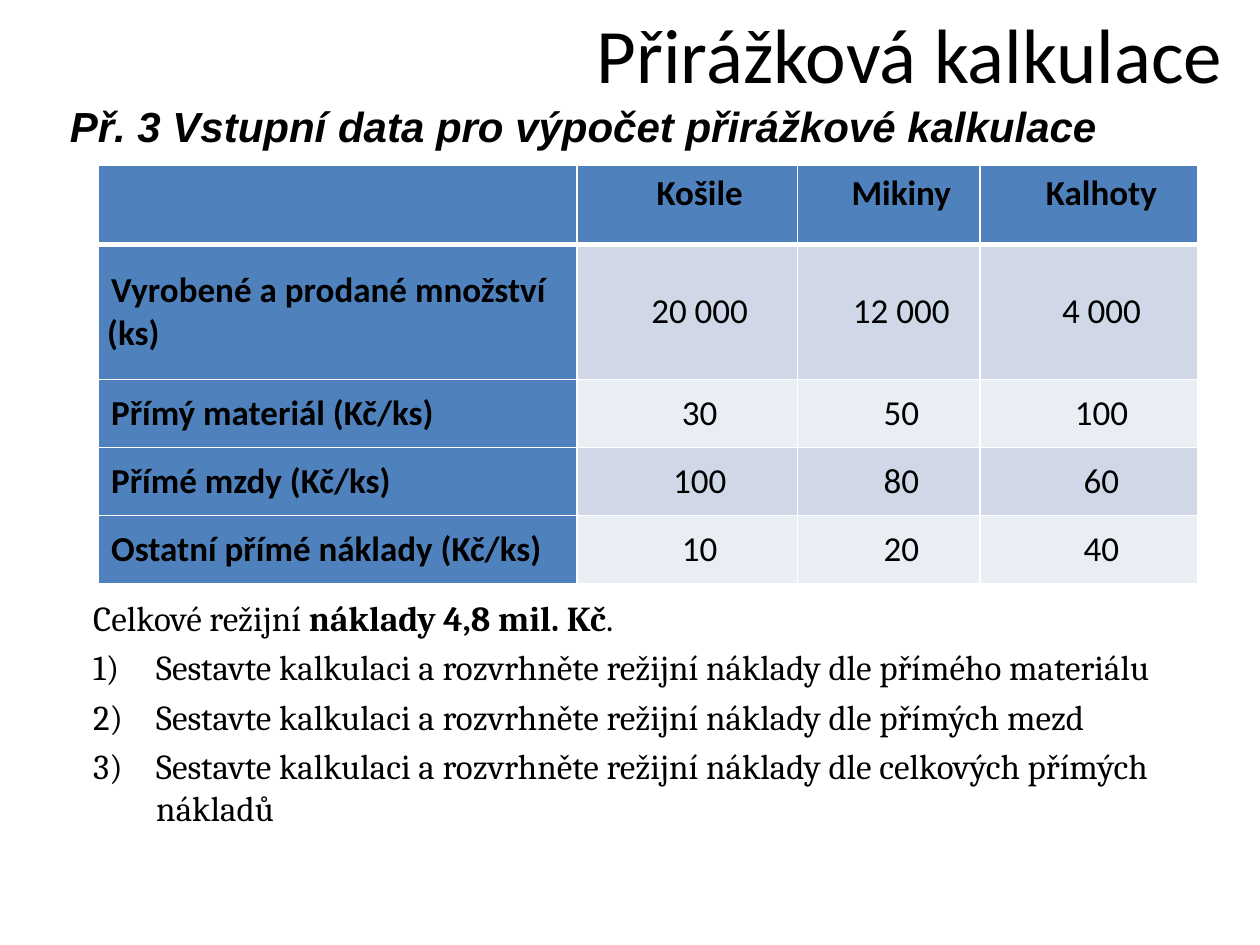
from lxml import etree
from pptx import Presentation
from pptx.dml.color import RGBColor
from pptx.enum.text import MSO_ANCHOR, PP_ALIGN
from pptx.oxml.ns import qn
from pptx.util import Cm, Pt

MIDDLE, TOP = MSO_ANCHOR.MIDDLE, MSO_ANCHOR.TOP
CENTER, LEFT = PP_ALIGN.CENTER, PP_ALIGN.LEFT
HUES = {"text": "000000", "head": "4F81BD", "odd": "D0D8E8",
        "even": "E9EDF4", "line": "FFFFFF"}


def style(para, face, size, bold=False, first=0, left=0):
    """Format all runs of a paragraph and set its indents in cm."""
    props = para._p.get_or_add_pPr()
    props.set("marL", str(Cm(left)))
    props.set("indent", str(Cm(first)))
    for run in para.runs:
        font = run.font
        font.name, font.size, font.bold = face, Pt(size), bold
        font.color.rgb = RGBColor.from_string(HUES["text"])


def add_box(left, top, width, height, anchor):
    box = slide.shapes.add_textbox(Cm(left), Cm(top), Cm(width), Cm(height))
    frame = box.text_frame
    frame.word_wrap = True
    frame.vertical_anchor = anchor
    return frame


deck = Presentation()
deck.slide_width, deck.slide_height = Cm(25.4), Cm(19.05)
slide = deck.slides.add_slide(deck.slide_layouts[6])

# Title
title = add_box(6.91, 0, 22.86, 2.13, MIDDLE)
title.text = "Přirážková kalkulace"
title.paragraphs[0].alignment = CENTER
style(title.paragraphs[0], "Calibri", 44)

# Input data table
rows = [
    ("", "Košile", "Mikiny", "Kalhoty"),
    ("Vyrobené a prodané množství (ks)", "20 000", "12 000", "4 000"),
    ("Přímý materiál (Kč/ks)", "30", "50", "100"),
    ("Přímé mzdy (Kč/ks)", "100", "80", "60"),
    ("Ostatní přímé náklady (Kč/ks)", "10", "20", "40"),
]
widths = [9.65, 4.45, 3.68, 4.39]
heights = [1.6, 2.72, 1.37, 1.37, 1.37]
table = slide.shapes.add_table(len(rows), len(widths), Cm(1.98), Cm(3.33),
                               Cm(sum(widths)), Cm(sum(heights))).table
for col, width in zip(table.columns, widths):
    col.width = Cm(width)
for row, height in zip(table.rows, heights):
    row.height = Cm(height)

for r, row in enumerate(rows):
    for c, text in enumerate(row):
        cell = table.cell(r, c)
        props = cell._tc.get_or_add_tcPr()
        for side in "LRTB":
            thick = (r, side) in ((0, "B"), (1, "T"))
            line = etree.SubElement(props, qn("a:ln" + side),
                                    w=str(Pt(3 if thick else 1)))
            fill = etree.SubElement(line, qn("a:solidFill"))
            etree.SubElement(fill, qn("a:srgbClr"), val=HUES["line"])
        head = r == 0 or c == 0
        hue = "head" if head else "odd" if r % 2 else "even"
        cell.fill.solid()
        cell.fill.fore_color.rgb = RGBColor.from_string(HUES[hue])
        cell.vertical_anchor = MIDDLE
        cell.margin_left = cell.margin_right = Cm(0.18)
        cell.margin_top = cell.margin_bottom = 0
        para = cell.text_frame.paragraphs[0]
        para.text = text
        para.alignment = CENTER if c else LEFT
        if r == 0:
            para.line_spacing = Pt(12)
        style(para, "Calibri", 20, head, 0.5 if c else 0.08)

# Subtitle
lead = add_box(0.66, 1.85, 21.92, 2.31, TOP)
lead.margin_top, lead.margin_right = Cm(0.18), 0
lead.text = "Př. 3 Vstupní data pro výpočet přirážkové kalkulace"
style(lead.paragraphs[0], "Arial", 24, True, 0.5)
lead.paragraphs[0].runs[0].font.italic = True

# Tasks
tasks = add_box(1.63, 11.91, 22.91, 5.41, TOP)
total = tasks.paragraphs[0]
for text in ("Celkové režijní ", "náklady 4,8 mil. Kč", "."):
    total.add_run().text = text
style(total, "Cambria", 20, first=-0.95, left=0.95)
total.runs[1].font.bold = True

for base in ("přímého materiálu", "přímých mezd", "celkových přímých nákladů"):
    para = tasks.add_paragraph()
    para.text = "Sestavte kalkulaci a rozvrhněte režijní náklady dle " + base
    para.space_before = Pt(4)
    etree.SubElement(para._p.get_or_add_pPr(), qn("a:buAutoNum"),
                     type="arabicParenR")
    style(para, "Cambria", 20, first=-1.27, left=1.27)

deck.save("out.pptx")
